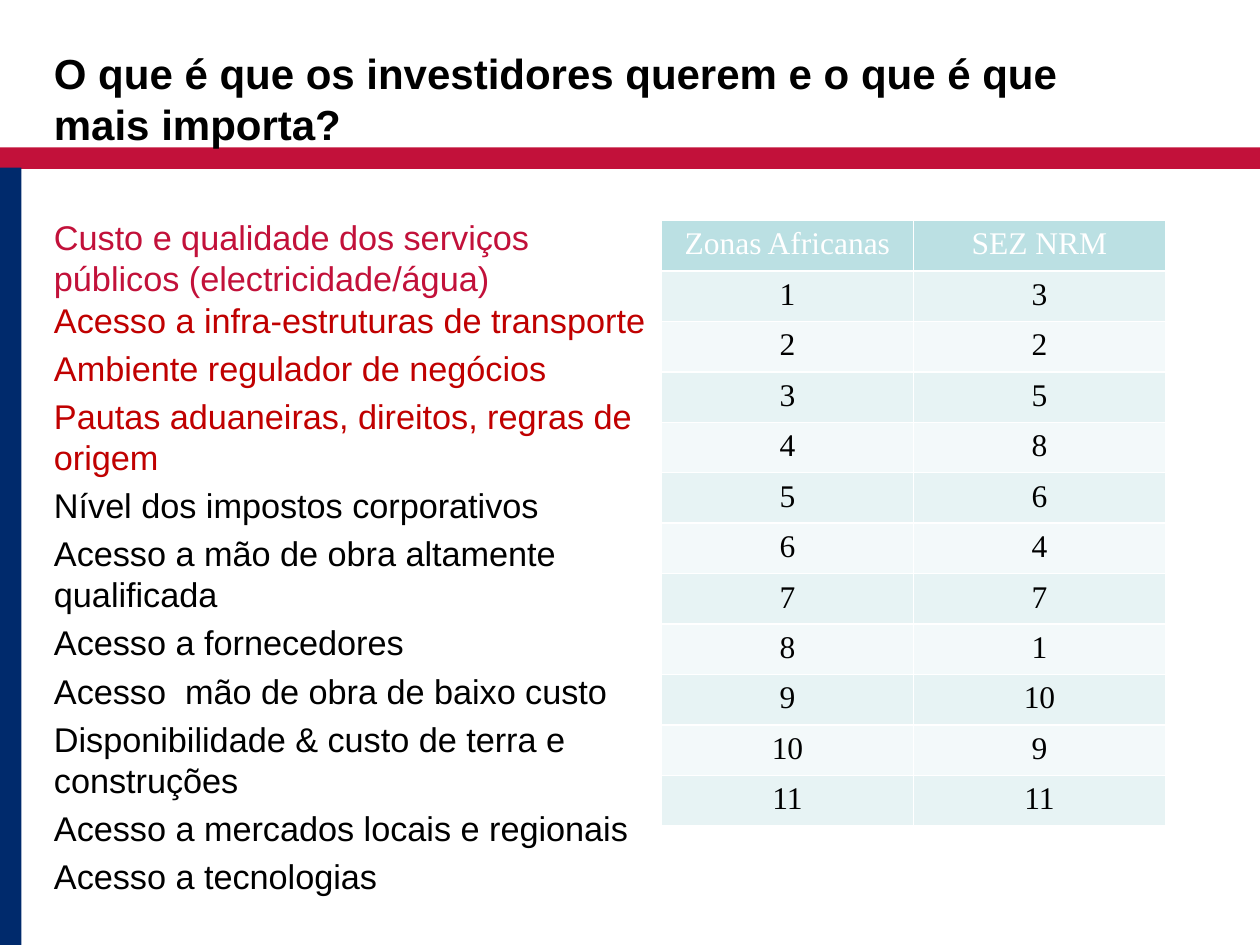
import pptx
import pptx.dml.color
import pptx.enum.shapes
import pptx.enum.text
import pptx.util
from pptx.util import Inches

COLORS = {
    "crimson": "C2113A",
    "navy": "002A6C",
    "red": "C00000",
    "black": "000000",
    "white": "FFFFFF",
    "header": "BBE0E3",
    "odd": "E7F3F4",
    "even": "F3F9FA",
}

TITLE = "O que é que os investidores querem e o que é que mais importa?"
FACTORS = [
    ("Custo e qualidade dos serviços públicos (electricidade/água)", "crimson"),
    ("Acesso a infra-estruturas de transporte", "red"),
    ("Ambiente regulador de negócios", "red"),
    ("Pautas aduaneiras, direitos, regras de origem", "red"),
    ("Nível dos impostos corporativos", "black"),
    ("Acesso a mão de obra altamente qualificada", "black"),
    ("Acesso a fornecedores", "black"),
    ("Acesso  mão de obra de baixo custo", "black"),
    ("Disponibilidade & custo de terra e construções", "black"),
    ("Acesso a mercados locais e regionais", "black"),
    ("Acesso a tecnologias", "black"),
]
HEADINGS = ("Zonas Africanas", "SEZ NRM")
SEZ_RANKS = [3, 2, 5, 8, 6, 4, 7, 1, 10, 9, 11]


def rgb(name):
    return pptx.dml.color.RGBColor.from_string(COLORS[name])


def write(paragraph, text, size, color="black", font="Arial", bold=False,
          align=pptx.enum.text.PP_ALIGN.LEFT, after=0):
    paragraph.alignment = align
    paragraph.space_before = pptx.util.Pt(0)
    paragraph.space_after = pptx.util.Pt(after)
    run = paragraph.add_run()
    run.text = text
    run.font.name = font
    run.font.size = pptx.util.Pt(size)
    run.font.bold = bold
    run.font.color.rgb = rgb(color)


class SlideBuilder:
    def __init__(self, slide):
        self.slide = slide
        self.table_font = "Times New Roman"
        self.table_size = 18

    def bar(self, left, top, width, height, color):
        shape = self.slide.shapes.add_shape(
            pptx.enum.shapes.MSO_SHAPE.RECTANGLE,
            Inches(left), Inches(top), Inches(width), Inches(height))
        shape.shadow.inherit = False
        shape.fill.solid()
        shape.fill.fore_color.rgb = rgb(color)
        shape.line.fill.background()

    def text_box(self, left, top, width, height, items, **style):
        shape = self.slide.shapes.add_textbox(
            Inches(left), Inches(top), Inches(width), Inches(height))
        frame = shape.text_frame
        frame.word_wrap = True
        for index, (text, overrides) in enumerate(items):
            paragraph = frame.add_paragraph() if index else frame.paragraphs[0]
            write(paragraph, text, **{**style, **overrides})

    def table(self, left, top, column_width, row_height, rows):
        columns = len(rows[0])
        table = self.slide.shapes.add_table(
            len(rows), columns, Inches(left), Inches(top),
            Inches(column_width * columns), Inches(row_height * len(rows))).table
        for row_index, values in enumerate(rows):
            table.rows[row_index].height = Inches(row_height)
            header = row_index == 0
            fill = "header" if header else ("even", "odd")[row_index % 2]
            for column_index, value in enumerate(values):
                cell = table.cell(row_index, column_index)
                cell.fill.solid()
                cell.fill.fore_color.rgb = rgb(fill)
                write(cell.text_frame.paragraphs[0], str(value), self.table_size,
                      color="white" if header else "black", font=self.table_font,
                      align=pptx.enum.text.PP_ALIGN.CENTER)


def main():
    presentation = pptx.Presentation()
    presentation.slide_width = Inches(10)
    presentation.slide_height = Inches(7.5)
    builder = SlideBuilder(presentation.slides.add_slide(presentation.slide_layouts[6]))

    builder.bar(0, 1.17, 10, 0.17, "crimson")
    builder.bar(0, 1.33, 0.17, 6.17, "navy")
    builder.text_box(0.33, 0.33, 8.5, 0.67, [(TITLE, {})], size=24, bold=True)
    factors = [(text, {"color": color, "after": 4 if index else 0})
               for index, (text, color) in enumerate(FACTORS)]
    builder.text_box(0.33, 1.67, 4.92, 5.5, factors, size=19.6)
    builder.table(5.25, 1.75, 2, 0.39, [HEADINGS, *enumerate(SEZ_RANKS, 1)])

    presentation.save("out.pptx")


if __name__ == "__main__":
    main()
